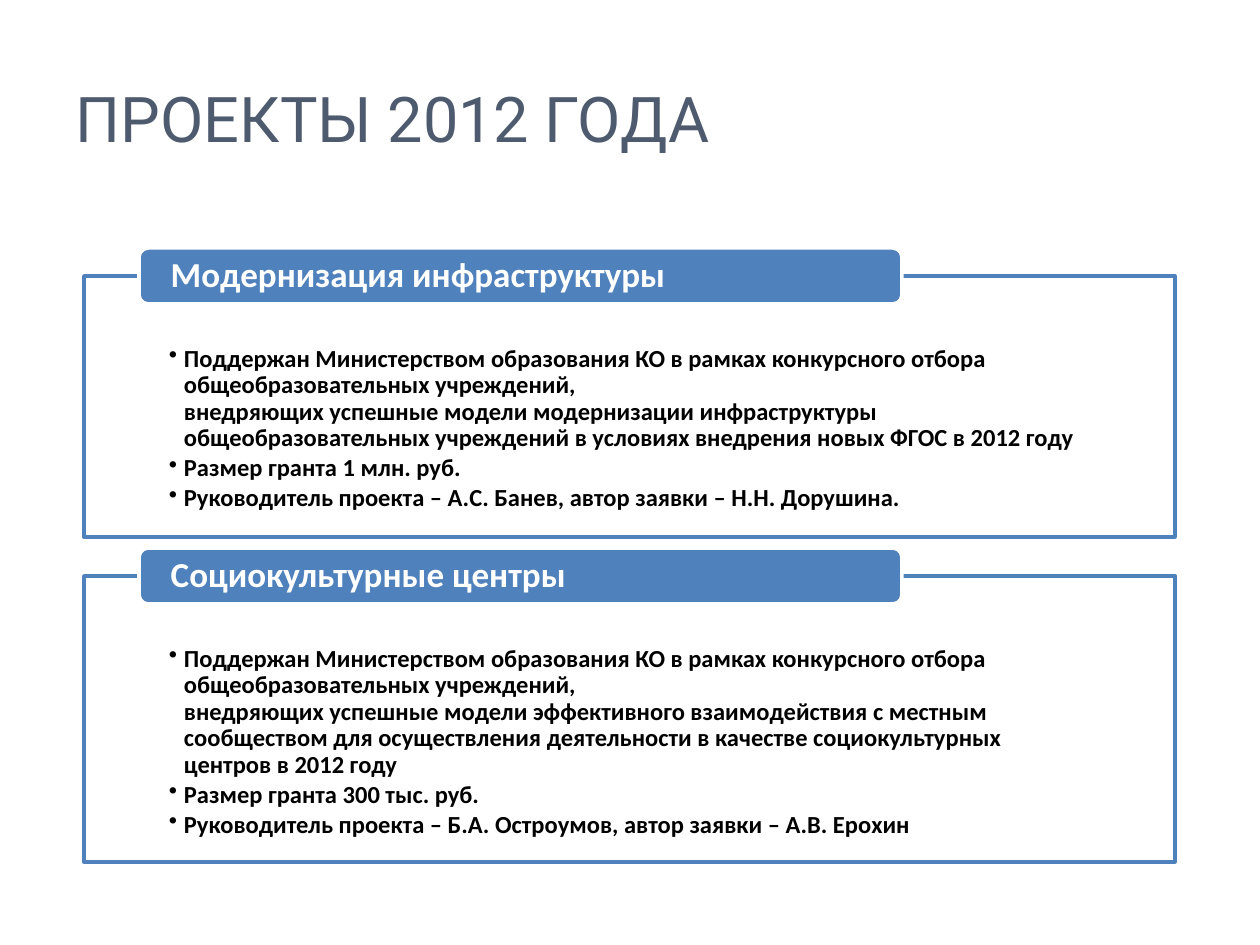
from copy import deepcopy

from lxml import etree
from pptx import Presentation
from pptx import util as u
from pptx.dml.color import RGBColor
from pptx.enum import shapes, text
from pptx.oxml.ns import qn

SCALE = 914400 / 126
BLUE = RGBColor(0x4F, 0x81, 0xBD)
SLATE = RGBColor(0x4E, 0x5B, 0x6F)
WHITE = RGBColor(0xFF, 0xFF, 0xFF)
BLACK = RGBColor(0, 0, 0)

SUPPORT = "Поддержан Министерством образования КО в рамках конкурсного отбора общеобразовательных учреждений, \nвнедряющих успешные модели "
PROJECTS = [
    (276, 261, "Модернизация инфраструктуры", [
        SUPPORT + "модернизации инфраструктуры общеобразовательных учреждений в условиях внедрения новых ФГОС в 2012 году",
        "Размер гранта 1 млн. руб.",
        "Руководитель проекта – А.С. Банев, автор заявки – Н.Н. Дорушина."]),
    (576, 286, "Социокультурные центры", [
        SUPPORT + "эффективного взаимодействия с местным сообществом для осуществления деятельности в качестве социокультурных центров в 2012 году",
        "Размер гранта 300 тыс. руб.",
        "Руководитель проекта – Б.А. Остроумов, автор заявки – А.В. Ерохин"]),
]


def px(n):
    return u.Emu(round(n * SCALE))


def set_frame(tf, anchor, left, top, right, bottom):
    tf.word_wrap = True
    tf.vertical_anchor = anchor
    tf.margin_left, tf.margin_top = px(left), px(top)
    tf.margin_right, tf.margin_bottom = px(right), px(bottom)


def style(p, font, size, color, bold=False):
    p.alignment = text.PP_ALIGN.LEFT
    for r in p.runs:
        r.font.name, r.font.size, r.font.bold = font, u.Pt(size), bold
        r.font.color.rgb = color
    for br in p._p.findall(qn("a:br")):
        br.append(deepcopy(p.runs[0].font._element))


def add_bullet(p):
    pPr = p._p.get_or_add_pPr()
    pPr.set("marL", str(px(15)))
    pPr.set("indent", str(-px(15)))
    etree.SubElement(pPr, qn("a:buChar"), char="•")


def add_box(s, kind, x, y, w, h, fill, line):
    sp = s.shapes.add_shape(kind, px(x), px(y), px(w), px(h))
    sp.shadow.inherit = False
    sp.fill.solid()
    sp.fill.fore_color.rgb = fill
    sp.line.color.rgb = line
    sp.line.width = u.Pt(2)
    return sp


def add_title(s, x, y, w, h, title):
    tf = s.shapes.add_textbox(px(x), px(y), px(w), px(h)).text_frame
    set_frame(tf, text.MSO_ANCHOR.MIDDLE, 13, 6, 13, 6)
    tf.text = title
    style(tf.paragraphs[0], "Roboto", 36, SLATE)


def add_project(s, x, y, w, h, name, items):
    sp = add_box(s, shapes.MSO_SHAPE.RECTANGLE, x, y, w, h, WHITE, BLUE)
    color = sp.fill._xPr.find(qn("a:solidFill"))[0]
    etree.SubElement(color, qn("a:alpha"), val="90000")
    tf = sp.text_frame
    set_frame(tf, text.MSO_ANCHOR.TOP, 85, 70, 85, 14)
    for i, item in enumerate(items):
        p = tf.add_paragraph() if i else tf.paragraphs[0]
        p.text = item
        p.level = 1
        p.line_spacing = 0.9
        p.space_after = u.Pt(2)
        style(p, "Calibri", 14, BLACK, True)
        add_bullet(p)

    tab = add_box(s, shapes.MSO_SHAPE.ROUNDED_RECTANGLE,
                  x + 55, y - 28, 763, 56, BLUE, WHITE)
    tf = tab.text_frame
    set_frame(tf, text.MSO_ANCHOR.MIDDLE, 29, 0, 29, 0)
    tf.text = name
    tf.paragraphs[0].line_spacing = 0.9
    style(tf.paragraphs[0], "Calibri", 20, WHITE, True)


def main():
    prs = Presentation()
    prs.slide_width, prs.slide_height = px(1260), px(945)
    s = prs.slides.add_slide(prs.slide_layouts[6])
    add_title(s, 63, 38, 1134, 158, "ПРОЕКТЫ 2012 ГОДА")
    for y, h, name, items in PROJECTS:
        add_project(s, 84, y, 1091, h, name, items)
    prs.save("out.pptx")


if __name__ == "__main__":
    main()
